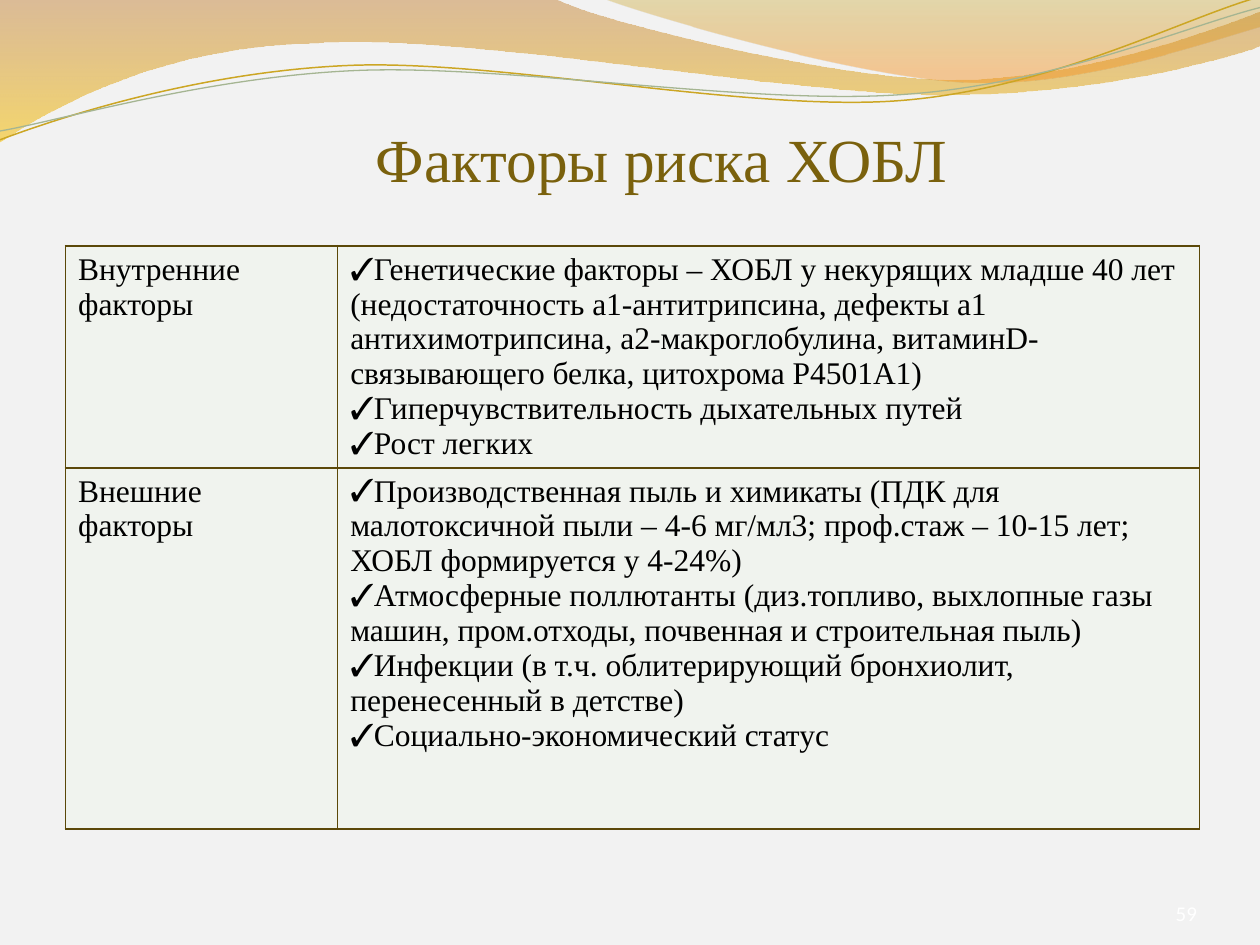
"""Build the slide on COPD risk factors: waves, title and a two-row table."""
from dataclasses import dataclass
from itertools import product
from typing import NamedTuple

from lxml import etree
from pptx import Presentation
from pptx import util as u
from pptx.dml import color
from pptx.enum import text
from pptx.oxml import ns

COLS, ROWS = 10, 7.5
UNIT = u.Inches(1)


@dataclass(frozen=True)
class Theme:
    """Colours, font, type sizes and rule widths."""
    back: str = "F2F2F2"
    title: str = "7A610D"
    ink: str = "000000"
    cell: str = "F0F3EE"
    rule: str = "5B4809"
    page: str = "FFFFFF"
    gold: str = "CCA624"
    sage: str = "A5B592"
    font: str = "Times New Roman"
    big: int = 35
    body: int = 18
    small: int = 12
    thin: float = 1
    thick: float = 1.25


class Box(NamedTuple):
    """A place on the grid, in columns and rows."""
    left: float
    top: float
    width: float
    height: float

    def emu(self) -> list:
        """Give the place in slide units."""
        return [int(v * UNIT) for v in self]


class Stop(NamedTuple):
    """One gradient stop."""
    pos: float
    hue: str
    alpha: int


class Wave(NamedTuple):
    """A run of Bezier curves and straight edges with a fill or a line."""
    start: tuple
    legs: list
    stops: tuple = ()
    hue: str = ""
    width: float = 0


class Row(NamedTuple):
    """A table row: label lines, bulleted points and share of the height."""
    label: list
    points: list
    share: float


T = Theme()
TITLE = Box(0.75, 0.68, 9, 0.87)
TABLE = Box(0.52, 1.95, 9, 4.63)
PAGE = Box(9, 7.1, 0.5, 0.3)
SHARES = (0.24, 0.76)

WAVES = [
    Wave((0, 0), [
        (4.4, -0.01), (4.76, 0.17, 6.64, 0.63, 7.58, 0.63),
        (8.53, 0.63, 9.58, 0.26, 10, 0.09), (10.01, 0.36),
        (9.83, 0.44, 8.7, 0.76, 7.46, 0.75), (6.22, 0.75, 3.82, 0.28, 2.57, 0.34),
        (1.29, 0.36, 0.46, 0.83, -0.01, 1.13)],
        (Stop(0, "C07A28", 45), Stop(1, "F7BF00", 55))),
    Wave((4.79, -0.01), [
        (5.09, 0.11, 6.82, 0.62, 7.69, 0.65),
        (8.56, 0.69, 9.61, 0.32, 10, 0.21), (10, 0)],
        (Stop(0, "C09709", 30), Stop(0.8, "F59320", 45))),
    Wave((0, 1.11), [
        (0.48, 0.93, 1.58, 0.57, 2.77, 0.52), (3.95, 0.47, 5.93, 0.89, 7.13, 0.8),
        (8.33, 0.71, 9.38, 0.15, 9.98, -0.02)], hue=T.gold, width=0.85),
    Wave((0, 1.04), [
        (0.47, 0.96, 1.64, 0.61, 2.83, 0.56), (4.03, 0.51, 5.97, 0.84, 7.17, 0.75),
        (8.36, 0.67, 9.41, 0.21, 10, 0.06)], hue=T.sage, width=0.75),
]

FACTS = [
    Row(["Внутренние", "факторы"], [
        "Генетические факторы – ХОБЛ у некурящих младше 40 лет (недостаточность "
        "a1-антитрипсина, дефекты a1 антихимотрипсина, a2-макроглобулина, "
        "витаминD- связывающего белка, цитохрома Р4501А1)",
        "Гиперчувствительность дыхательных путей",
        "Рост легких"], 0.38),
    Row(["Внешние факторы"], [
        "Производственная пыль и химикаты (ПДК для малотоксичной пыли – 4-6 мг/мл3; "
        "проф.стаж – 10-15 лет; ХОБЛ формируется у 4-24%)",
        "Атмосферные поллютанты (диз.топливо, выхлопные газы машин, пром.отходы, "
        "почвенная и строительная пыль)",
        "Инфекции (в т.ч. облитерирующий бронхиолит, перенесенный в детстве)",
        "Социально-экономический статус"], 0.62),
]


def rgb(hue: str) -> color.RGBColor:
    """Turn a hex string into a colour."""
    return color.RGBColor.from_string(hue)


def sub(node, tag: str, **attrs):
    """Add a drawing element below a node."""
    return etree.SubElement(node, ns.qn(tag), attrs)


def write(frame, lines: list, *, size=T.body, hue=T.ink, font=T.font,
          align=text.PP_ALIGN.LEFT, mark="") -> None:
    """Fill a text frame with one paragraph a line."""
    frame.word_wrap = True
    for i, line in enumerate(lines):
        para = frame.add_paragraph() if i else frame.paragraphs[0]
        para.alignment = align
        if mark:
            props = para._p.get_or_add_pPr()
            props.set("marL", "0")
            props.set("indent", "0")
            sub(props, "a:buFont", typeface=font)
            sub(props, "a:buChar", char=mark)
        run = para.add_run()
        run.text = line
        run.font.size = u.Pt(size)
        run.font.color.rgb = rgb(hue)
        if font:
            run.font.name = font


def bend(shape, legs: list) -> None:
    """Join each three segments of a curved leg into one Bezier curve."""
    nodes = iter(list(shape.element.iter(ns.qn("a:lnTo"))))
    for leg in legs:
        parts = [next(nodes) for _ in leg[::2]]
        if len(parts) == 1:
            continue
        curve = etree.Element(ns.qn("a:cubicBezTo"))
        parts[0].addprevious(curve)
        for part in parts:
            curve.append(part[0])
            part.getparent().remove(part)


def draw(slide, wave: Wave) -> None:
    """Draw one wave as a filled shape or as a line."""
    dots = [wave.start, *(d for leg in wave.legs for d in zip(leg[::2], leg[1::2]))]
    first, *rest = [(int(x * UNIT), int(y * UNIT)) for x, y in dots]
    pen = slide.shapes.build_freeform(*first)
    pen.add_line_segments(rest, close=bool(wave.stops))
    shape = pen.convert_to_shape()
    bend(shape, wave.legs)
    shape.shadow.inherit = False
    if not wave.stops:
        shape.fill.background()
        shape.line.color.rgb = rgb(wave.hue)
        shape.line.width = u.Pt(wave.width)
        return
    shape.line.fill.background()
    shape.fill.gradient()
    shape.fill.gradient_angle = 270
    for slot, stop in zip(shape.fill.gradient_stops, wave.stops):
        slot.position = stop.pos
        slot.color.rgb = rgb(stop.hue)
    for node, stop in zip(shape.element.iter(ns.qn("a:srgbClr")), wave.stops):
        sub(node, "a:alpha", val=str(stop.alpha * 1000))


def paint(cell, inner: str) -> None:
    """Give a cell its fill and borders, thin on the inner side."""
    props = cell._tc.get_or_add_tcPr()
    for side in "LRTB":
        width = T.thin if side == inner else T.thick
        edge = sub(props, f"a:ln{side}", w=str(int(u.Pt(width))))
        sub(sub(edge, "a:solidFill"), "a:srgbClr", val=T.rule)
        sub(edge, "a:prstDash", val="solid")
    cell.fill.solid()
    cell.fill.fore_color.rgb = rgb(T.cell)


def grid(slide, box: Box, rows: list) -> None:
    """Add the table of factors."""
    table = slide.shapes.add_table(len(rows), len(SHARES), *box.emu()).table
    table.first_row = table.horz_banding = False
    for col, share in zip(table.columns, SHARES):
        col.width = int(box.width * share * UNIT)
    for line, row in zip(table.rows, rows):
        line.height = int(box.height * row.share * UNIT)
    for r, c in product(range(len(rows)), range(len(SHARES))):
        cell = table.cell(r, c)
        paint(cell, "L" if c else "R")
        if c:
            write(cell.text_frame, rows[r].points, mark="✓")
        else:
            cell.margin_right = u.Inches(0.2)
            write(cell.text_frame, rows[r].label)


def head(slide, line: str) -> None:
    """Place and format the title above the waves."""
    title = slide.shapes.title
    title.left, title.top, title.width, title.height = TITLE.emu()
    title.element.getparent().append(title.element)
    frame = title.text_frame
    frame.auto_size = text.MSO_AUTO_SIZE.NONE
    frame.vertical_anchor = text.MSO_ANCHOR.BOTTOM
    frame.margin_left = frame.margin_right = frame.margin_bottom = 0
    frame.margin_top = u.Inches(0.05)
    write(frame, [line], size=T.big, hue=T.title, align=text.PP_ALIGN.CENTER)


def main() -> None:
    """Build and save the deck."""
    deck = Presentation()
    deck.slide_width, deck.slide_height = int(COLS * UNIT), int(ROWS * UNIT)
    slide = deck.slides.add_slide(deck.slide_layouts[5])
    slide.background.fill.solid()
    slide.background.fill.fore_color.rgb = rgb(T.back)
    for wave in WAVES:
        draw(slide, wave)
    head(slide, "Факторы риска ХОБЛ")
    grid(slide, TABLE, FACTS)
    page = slide.shapes.add_textbox(*PAGE.emu()).text_frame
    page.margin_right = 0
    page.vertical_anchor = text.MSO_ANCHOR.MIDDLE
    write(page, ["59"], size=T.small, hue=T.page, font="", align=text.PP_ALIGN.RIGHT)
    deck.save("out.pptx")


if __name__ == "__main__":
    main()
